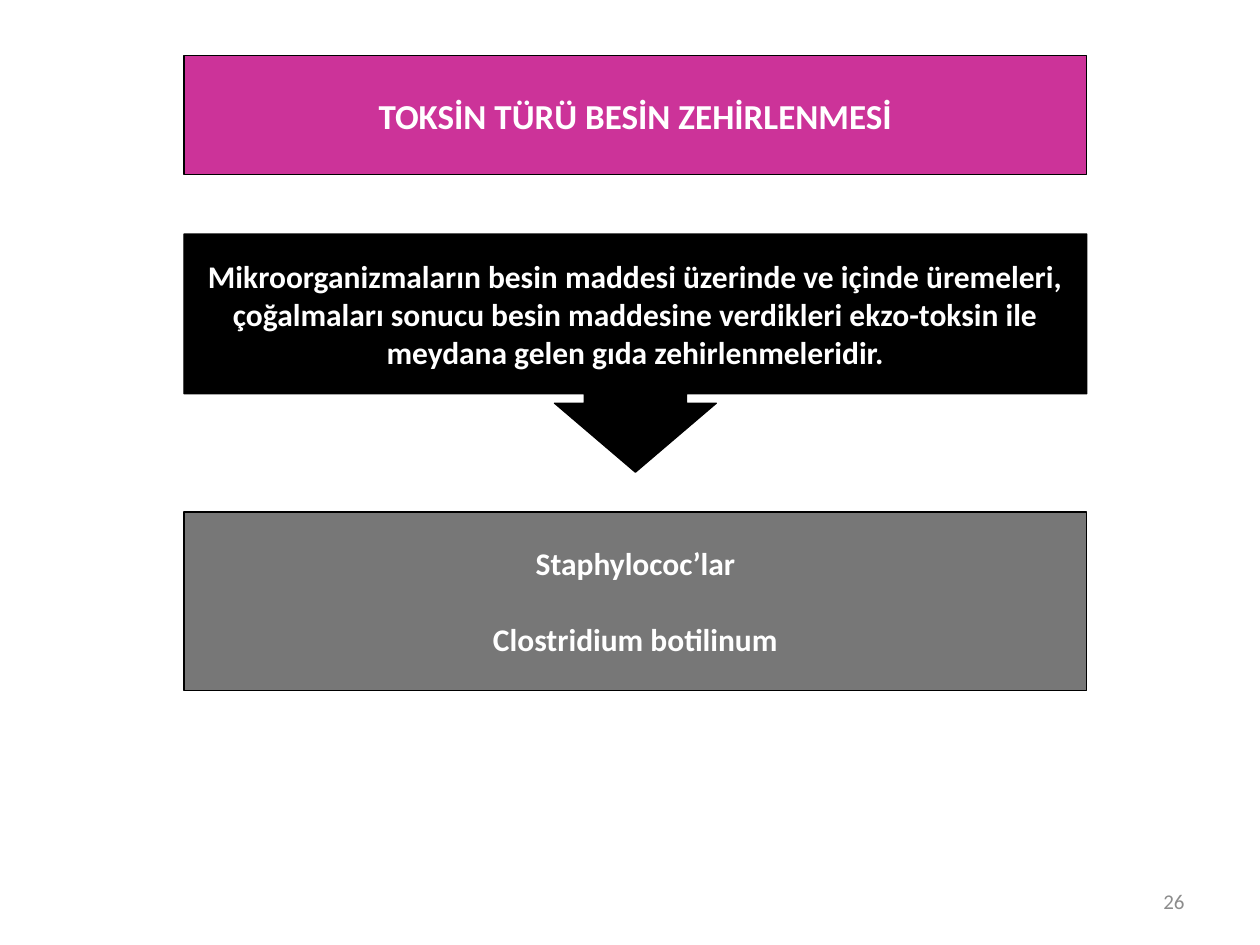
from dataclasses import dataclass

from pptx import Presentation
from pptx.dml.color import RGBColor
from pptx.enum.shapes import MSO_SHAPE
from pptx.enum.text import MSO_ANCHOR, MSO_AUTO_SIZE, PP_ALIGN
from pptx.oxml.ns import qn
from pptx.util import Cm, Pt


@dataclass(frozen=True)
class Theme:
    font: str = "Calibri"
    pink: str = "CC3399"
    black: str = "000000"
    gray: str = "777777"
    white: str = "FFFFFF"
    pale: str = "8C8C8C"
    head: int = 20
    body: int = 18
    note: int = 12
    edge: float = 0.75


THEME = Theme()
LEFT, WIDTH = 3.71, 18.2


def apply(item, values):
    for name, value in values.items():
        setattr(item, name, value)


def place(shape, box):
    names = ("left", "top", "width", "height")
    apply(shape, dict(zip(names, map(Cm, box))))


def paint(shape, color):
    shape.fill.solid()
    shape.fill.fore_color.rgb = RGBColor.from_string(color)
    shape.line.color.rgb = RGBColor.from_string(THEME.black)
    shape.line.width = Pt(THEME.edge)


def write(shape, lines, size, color=THEME.white, bold=True,
          align=PP_ALIGN.CENTER, gap=0, wrap=True):
    frame = shape.text_frame
    frame.text = "\n".join(lines)
    apply(frame, {"word_wrap": wrap, "auto_size": MSO_AUTO_SIZE.NONE,
                  "vertical_anchor": MSO_ANCHOR.MIDDLE})
    for index, para in enumerate(frame.paragraphs):
        apply(para, {"alignment": align, "space_after": Pt(0),
                     "space_before": Pt(gap if index else 0)})
        for run in para.runs:
            apply(run.font, {"name": THEME.font, "size": Pt(size), "bold": bold})
            run.font.color.rgb = RGBColor.from_string(color)


def clear_bullets(shape):
    for para in shape.text_frame.paragraphs:
        props = para._p.get_or_add_pPr()
        props.set("marL", "0")
        props.set("indent", "0")
        props.append(props.makeelement(qn("a:buNone"), {}))


def add_title(slide, box, text):
    title = slide.shapes.title
    place(title, box)
    paint(title, THEME.pink)
    write(title, [text], THEME.head)


def add_callout(slide, box, text):
    shape = slide.shapes.add_shape(MSO_SHAPE.DOWN_ARROW_CALLOUT, *map(Cm, box))
    shape.shadow.inherit = False
    for index, value in enumerate((0.43, 0.34, 0.29, 0.67)):
        shape.adjustments[index] = value
    paint(shape, THEME.black)
    write(shape, [text], THEME.body)


def add_list(slide, box, lines):
    body = slide.placeholders[1]
    place(body, box)
    paint(body, THEME.gray)
    write(body, lines, THEME.body, gap=22)
    clear_bullets(body)


def add_number(slide, box, text):
    label = slide.shapes.add_textbox(*map(Cm, box))
    write(label, [text], THEME.note, THEME.pale, False, PP_ALIGN.RIGHT)


def main():
    deck = Presentation()
    apply(deck, {"slide_width": Cm(25.4), "slide_height": Cm(19.05)})
    slide = deck.slides.add_slide(deck.slide_layouts[1])
    add_title(slide, (LEFT, 1.12, WIDTH, 2.4), "TOKSİN TÜRÜ BESİN ZEHİRLENMESİ")
    add_callout(slide, (LEFT, 4.72, WIDTH, 4.8),
                "Mikroorganizmaların besin maddesi üzerinde ve içinde üremeleri, "
                "çoğalmaları sonucu besin maddesine verdikleri ekzo-toksin ile "
                "meydana gelen gıda zehirlenmeleridir.")
    add_list(slide, (LEFT, 10.32, WIDTH, 3.6),
             ["Staphylococ’lar", "Clostridium botilinum"])
    add_number(slide, (18.2, 17.65, 5.93, 1.02), "26")
    deck.save("out.pptx")


if __name__ == "__main__":
    main()
